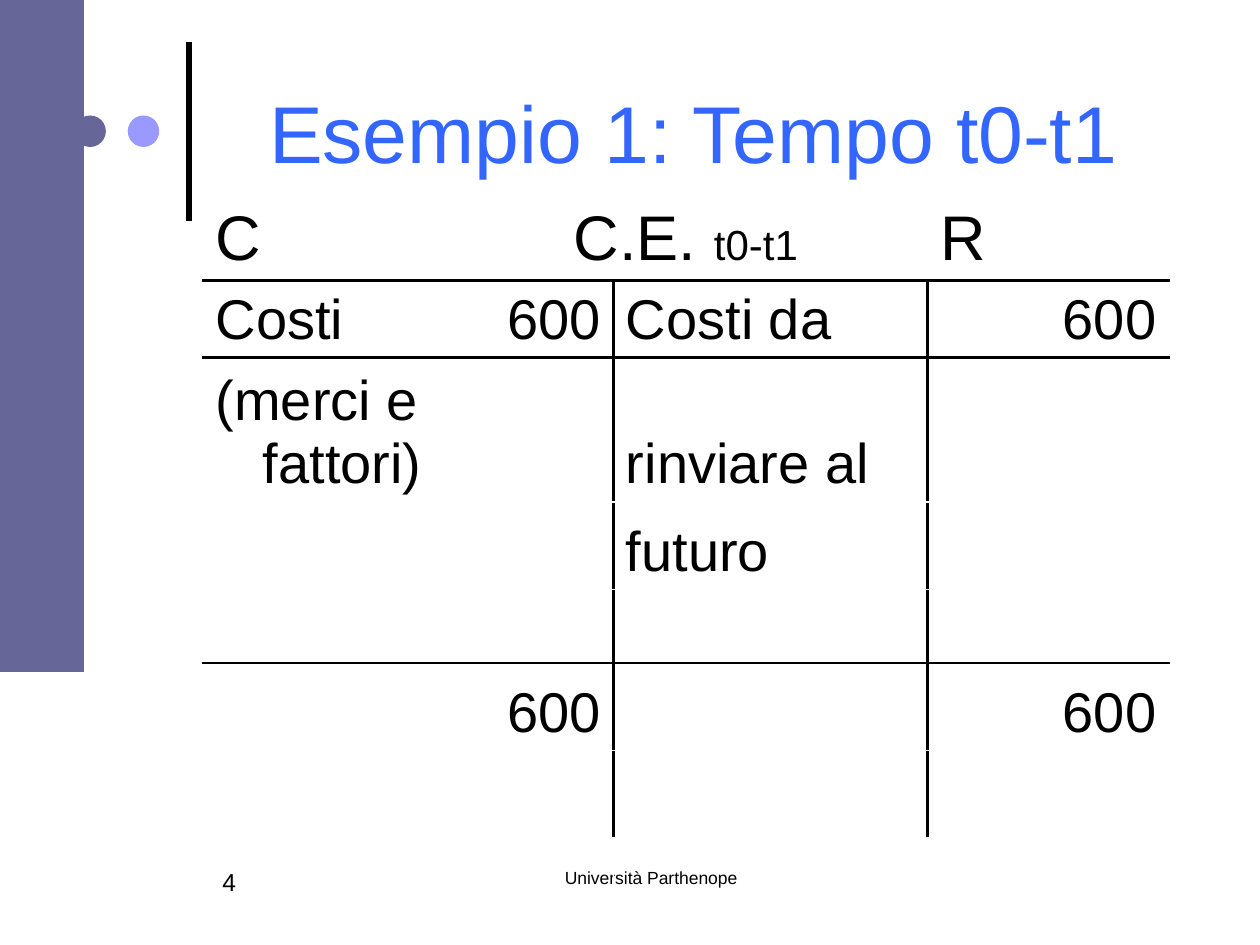
from lxml import etree
from pptx import Presentation
from pptx.dml.color import RGBColor
from pptx.enum import shapes, text
from pptx.oxml import ns
from pptx.util import Pt

COLORS = {"ink": "000000", "title": "3366FF", "slate": "666699", "lilac": "9999FF"}
FONT = "Arial"
LEFT, CENTER, RIGHT = text.PP_ALIGN.LEFT, text.PP_ALIGN.CENTER, text.PP_ALIGN.RIGHT


def add_run(p, content, size, color="ink"):
    """Append one styled run to a paragraph."""
    r = p.add_run()
    r.text = content
    r.font.name = FONT
    r.font.size = Pt(size)
    r.font.color.rgb = RGBColor.from_string(COLORS[color])


def add_label(s, box, content, size, color="ink", align=LEFT, anchor=text.MSO_ANCHOR.TOP):
    """Place a single-paragraph text box."""
    tf = s.shapes.add_textbox(*map(Pt, box)).text_frame
    tf.word_wrap = True
    tf.vertical_anchor = anchor
    p = tf.paragraphs[0]
    p.alignment = align
    add_run(p, content, size, color)


def add_solid(s, kind, box, color):
    """Place a plain filled shape without outline."""
    sp = s.shapes.add_shape(kind, *map(Pt, box))
    sp.shadow.inherit = False
    sp.fill.solid()
    sp.fill.fore_color.rgb = RGBColor.from_string(COLORS[color])
    sp.line.fill.background()


def add_decoration(s, x, y, band_w, band_h):
    """Draw the rule, the two dots and the side band."""
    rule = s.shapes.add_connector(shapes.MSO_CONNECTOR.STRAIGHT,
                                  *map(Pt, (x + 108, y + 126, x + 108, y + 24)))
    rule.line.width = Pt(3)
    rule.line.color.rgb = RGBColor.from_string(COLORS["ink"])
    etree.SubElement(rule._element.spPr, ns.qn("a:effectLst"))
    for dx, color in ((42.5, "slate"), (73, "lilac")):
        add_solid(s, shapes.MSO_SHAPE.OVAL, (x + dx, y + 66, 18, 18), color)
    add_solid(s, shapes.MSO_SHAPE.RECTANGLE, (x, y, band_w, band_h), "slate")


def set_borders(cell, widths):
    """Add black borders, given as side and width pairs, ahead of the cell fill."""
    pr = cell._tc.get_or_add_tcPr()
    sides = [side for side in ("L", "R", "T", "B") if side in widths]
    for i, side in enumerate(sides):
        ln = etree.Element(ns.qn(f"a:ln{side}"), w=str(Pt(widths[side])))
        fill = etree.SubElement(ln, ns.qn("a:solidFill"))
        etree.SubElement(fill, ns.qn("a:srgbClr"), val=COLORS["ink"])
        pr.insert(i, ln)


def account_borders(row, col):
    """Return the borders that make up the T-account."""
    widths = {}
    if row in (0, 4):
        widths["B"] = 2 if row == 0 else 1
    if row in (1, 5):
        widths["T"] = 2 if row == 1 else 1
    if 1 <= row <= 6 and col in (1, 2):
        widths["R" if col == 1 else "L"] = 2
    return widths


def add_account(s, x, y, cols, rows, entries):
    """Build the T-account table from a dict of entries keyed by row and column."""
    table = s.shapes.add_table(len(rows), len(cols), *map(Pt, (x, y, sum(cols), sum(rows)))).table
    table.first_row = table.horz_banding = False
    for col, width in zip(table.columns, cols):
        col.width = Pt(width)
    for row, height in zip(table.rows, rows):
        row.height = Pt(height)
    table.cell(0, 1).merge(table.cell(0, 2))
    for i in range(len(rows)):
        for j in range(len(cols)):
            cell = table.cell(i, j)
            cell.fill.background()
            cell.vertical_anchor = text.MSO_ANCHOR.BOTTOM
            cell.margin_top = Pt(2)
            set_borders(cell, account_borders(i, j))
            if (i, j) in entries:
                align, *runs = entries[i, j]
                p = cell.text_frame.paragraphs[0]
                p.alignment = align
                pPr = p._p.get_or_add_pPr()
                pPr.set("marL", str(Pt(27)))
                pPr.set("indent", str(Pt(-27)))
                for content, size in runs:
                    add_run(p, content, size)


def main():
    """Build and save the slide."""
    prs = Presentation()
    prs.slide_width, prs.slide_height = Pt(720), Pt(540)
    s = prs.slides.add_slide(prs.slide_layouts[6])
    add_decoration(s, 0, 0, 48, 384)
    add_label(s, (258, 492, 228, 36), "Università Parthenope", 10, align=CENTER)
    add_label(s, (120, 492, 102, 36), "4", 14)
    add_label(s, (120, 15, 552, 120), "Esempio 1: Tempo t0-t1", 46, "title", CENTER,
              text.MSO_ANCHOR.MIDDLE)
    amount = (RIGHT, ("600", 32))
    entries = {
        (0, 0): (LEFT, ("C", 36)),
        (0, 1): (CENTER, ("C.E. ", 36), ("t0-t1", 24)),
        (0, 3): (LEFT, ("R", 36)),
        (1, 0): (LEFT, ("Costi", 32)),
        (1, 2): (LEFT, ("Costi da", 32)),
        (2, 0): (LEFT, ("(merci e fattori)", 32)),
        (2, 2): (LEFT, ("rinviare al", 32)),
        (3, 2): (LEFT, ("futuro", 32)),
        **{(row, col): amount for row in (1, 5) for col in (1, 3)},
    }
    add_account(s, 116, 111.6, (138, 96.5, 179.5, 138),
                (47, 44, 79, 50, 42, 50, 50, 50), entries)
    prs.save("out.pptx")


if __name__ == "__main__":
    main()
